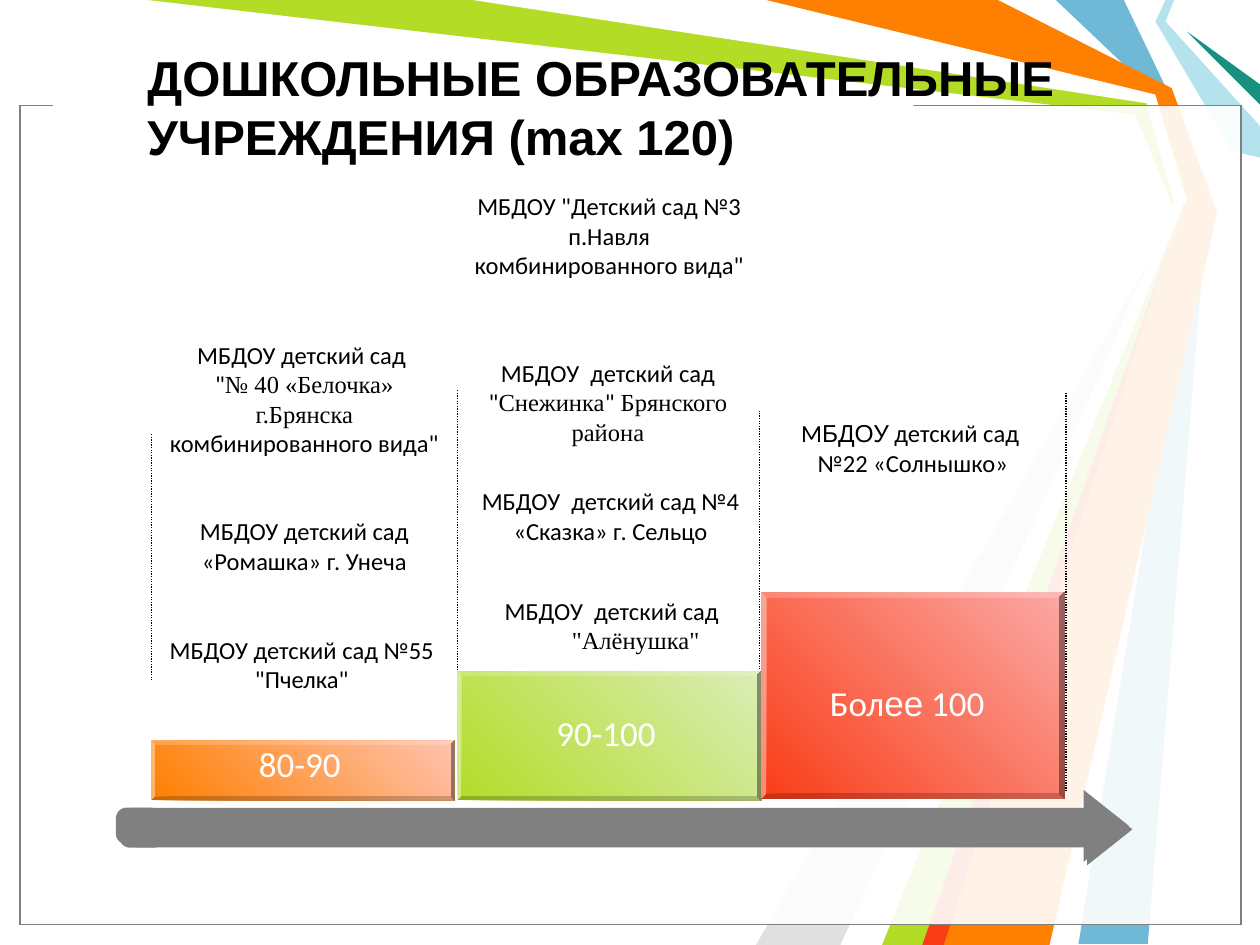
from lxml import etree
from pptx import Presentation
from pptx.dml.color import RGBColor
from pptx.enum.dml import MSO_LINE
from pptx.enum.shapes import MSO_CONNECTOR, MSO_SHAPE
from pptx.enum.text import MSO_ANCHOR, PP_ALIGN
from pptx.oxml import parse_xml
from pptx.oxml.ns import nsdecls, qn
from pptx.util import Inches, Pt

RECT, ROUNDED = MSO_SHAPE.RECTANGLE, MSO_SHAPE.ROUNDED_RECTANGLE
ARROW, BEVEL = MSO_SHAPE.RIGHT_ARROW, MSO_SHAPE.BEVEL
STRAIGHT, DOTTED = MSO_CONNECTOR.STRAIGHT, MSO_LINE.ROUND_DOT
LEFT, CENTER, MIDDLE = PP_ALIGN.LEFT, PP_ALIGN.CENTER, MSO_ANCHOR.MIDDLE

BLACK = RGBColor(0x00, 0x00, 0x00)
WHITE = RGBColor(0xFF, 0xFF, 0xFF)
GRAY = RGBColor(0x80, 0x80, 0x80)
SILVER = RGBColor(0xE0, 0xE0, 0xE0)
BLUE = RGBColor(0x6F, 0xB9, 0xD7)
PALE_BLUE = RGBColor(0xB4, 0xE3, 0xEE)
TEAL = RGBColor(0x18, 0x91, 0x80)
GREEN = RGBColor(0xB3, 0xDC, 0x27)
PALE_GREEN = RGBColor(0xDA, 0xED, 0xB7)
ORANGE = RGBColor(0xFF, 0x7F, 0x00)
PEACH = RGBColor(0xFF, 0xC3, 0xB0)
RED = RGBColor(0xF9, 0x3D, 0x17)
PINK = RGBColor(0xFB, 0xA9, 0xA5)

CALIBRI, ARIAL, TIMES = "Calibri", "Arial", "Times New Roman"

RIBBONS = [
    (BLUE, [(8.92, 0), (9.29, 0.77), (9.58, 1.67), (9.11, 7.49), (8.56, 7.49),
            (9.5, 1.67), (9.17, 0.75), (8.38, 0)]),
    (GREEN, [(1.17, 0), (3.83, 0), (9.14, 0.78), (9.42, 1.69), (7.42, 7.5),
             (6.92, 7.5), (9.35, 1.73), (9.01, 0.91)]),
    (SILVER, [(6.67, 7.5), (9.27, 1.81), (6, 7.5)]),
    (WHITE, [(3.75, 0), (9.1, 0.82), (9.32, 1.62), (6.75, 7.5), (7, 7.5),
             (9.41, 1.58), (9.17, 0.75), (6, 0)]),
    (PALE_BLUE, [(9.25, 0), (9.17, 0.17), (9.78, 1.2), (10, 1.25), (10, 1),
                 (9.25, 0.17), (9.32, 0)]),
    (TEAL, [(10, 0.83), (9.42, 0.25), (10, 0.67)]),
    (ORANGE, [(6.08, 0), (7.92, 0), (9.3, 0.7), (9.66, 1.69), (8.33, 7.5),
              (7.33, 7.5), (9.42, 1.58), (9.17, 0.75)]),
    (RED, [(7.32, 7.5), (9.32, 1.83), (7.49, 7.5)]),
]

# x, bottom, top
DIVIDERS = [(1.2, 5.4, 3.44), (3.63, 5.4, 3.09), (6.03, 6.03, 3.26), (8.46, 6.28, 3.12)]

# left, top, height, bevel depth, gradient colours
STEPS = [
    (1.2, 5.88, 0.47, 0.059, ORANGE, PEACH),
    (3.63, 5.33, 1.02, 0.03, GREEN, PALE_GREEN),
    (6.04, 4.7, 1.64, 0.025, RED, PINK),
]

# left, top, runs
STEP_LABELS = [
    (1.44, 5.84, [("80-90", CALIBRI)]),
    (3.87, 5.6, [("90-100", CALIBRI)]),
    (6.26, 5.36, [("Бол", CALIBRI), ("ее", ARIAL), (" 100", CALIBRI)]),
]

# left, top, height, paragraphs of runs
KINDERGARTENS = [
    (3.66, 1.47, 0.81, [[("МБДОУ \"Детский сад №3 п.Навля комбинированного вида\"", CALIBRI)]]),
    (6.07, 3.27, 0.57, [[("М", CALIBRI), ("БДОУ", ARIAL),
                         (" детский сад  №22 «Солнышко»", CALIBRI)]]),
    (3.65, 2.79, 0.8, [[("МБДОУ  детский сад \"", CALIBRI), ("Снежинка", TIMES),
                        ("\"", CALIBRI), (" Брянского района", TIMES)]]),
    (3.67, 3.81, 0.57, [[("МБДОУ  детский сад №4 «Сказка» г. Сельцо", CALIBRI)]]),
    (1.24, 2.65, 1.26, [[("МБДОУ детский сад ", CALIBRI)],
                        [("\"", CALIBRI), ("№ 40 «Белочка» г.Брянска ", TIMES),
                         ("комбинированного вида\"", CALIBRI)]]),
    (1.24, 4.05, 0.57, [[("МБДОУ детский сад «Ромашка» г. Унеча", CALIBRI)]]),
    (1.22, 4.99, 0.57, [[("МБДОУ детский сад №55 \"Пчелка\"", CALIBRI)]]),
]
ALYONUSHKA = [[("МБДОУ  детский сад ", CALIBRI), ("\"Алёнушка\"", TIMES)]]


def shadow_effect(color, distance, alpha=100):
    return parse_xml(
        f'<a:effectLst {nsdecls("a")}><a:outerShdw dist="{Pt(distance)}" dir="2700000">'
        f'<a:srgbClr val="{color}"><a:alpha val="{alpha * 1000}"/></a:srgbClr>'
        '</a:outerShdw></a:effectLst>')


def add_ribbon(slide, color, points):
    corners = [(Inches(x), Inches(y)) for x, y in points]
    builder = slide.shapes.build_freeform(*corners[0])
    builder.add_line_segments(corners[1:], close=True)
    ribbon = builder.convert_to_shape()
    ribbon.shadow.inherit = False
    ribbon.fill.solid()
    ribbon.fill.fore_color.rgb = color
    ribbon.line.fill.background()


def add_block(slide, preset, left, top, width, height, color, adjustments=()):
    block = slide.shapes.add_shape(
        preset, Inches(left), Inches(top), Inches(width), Inches(height))
    for index, value in enumerate(adjustments):
        block.adjustments[index] = value
    block.shadow.inherit = False
    block.fill.solid()
    block.fill.fore_color.rgb = color
    block.line.fill.background()
    return block


def add_frame(slide, line_color):
    """Add the translucent panel that fades the ribbons behind the content."""
    frame = add_block(slide, RECT, 0.16, 0.84, 9.69, 6.5, WHITE)
    fill_color = frame.fill._xPr.find(qn("a:solidFill"))[0]
    etree.SubElement(fill_color, qn("a:alpha")).set("val", "69000")
    frame.line.color.rgb = line_color
    frame.line.width = Pt(0.75)


def add_axis_part(slide, preset, left, top, width, height, adjustments):
    part = add_block(slide, preset, left, top, width, height, GRAY, adjustments)
    properties = part._element.spPr
    properties.replace(properties.find(qn("a:effectLst")), shadow_effect(GRAY, 2.8))


def add_divider(slide, x, bottom, top):
    divider = slide.shapes.add_connector(
        STRAIGHT, Inches(x), Inches(bottom), Inches(x), Inches(top))
    divider.line.color.rgb = BLACK
    divider.line.width = Pt(0.75)
    divider.line.dash_style = DOTTED
    etree.SubElement(divider._element.spPr, qn("a:effectLst"))


def add_step(slide, left, top, height, depth, start_color, end_color):
    step = add_block(slide, BEVEL, left, top, 2.41, height, start_color, [depth])
    step.fill.gradient()
    step.fill.gradient_angle = 45
    for stop, position, color in zip(step.fill.gradient_stops, (0, 1), (start_color, end_color)):
        stop.position = position
        stop.color.rgb = color


def add_text(slide, left, top, width, height, paragraphs, size, color):
    box = slide.shapes.add_textbox(Inches(left), Inches(top), Inches(width), Inches(height))
    frame = box.text_frame
    frame.word_wrap = True
    for index, runs in enumerate(paragraphs):
        paragraph = frame.add_paragraph() if index else frame.paragraphs[0]
        paragraph.alignment = CENTER
        for text, font_name in runs:
            run = paragraph.add_run()
            run.text = text
            run.font.name = font_name
            run.font.size = Pt(size)
            run.font.color.rgb = color
    return box


def add_step_label(slide, left, top, runs):
    label = add_text(slide, left, top, 1.88, 0.43, [runs], 20, WHITE)
    for run in label.text_frame.paragraphs[0].runs:
        fill = run.font._element.find(qn("a:solidFill"))
        fill.addnext(shadow_effect(BLACK, 2, 40))


def format_title(slide):
    title = slide.shapes.title
    slide.shapes._spTree.append(title._element)  # bring in front of the ribbons
    title.left, title.top = Inches(1.07), Inches(0.22)
    title.width, title.height = Inches(7.79), Inches(1.25)
    title.text_frame.text = "ДОШКОЛЬНЫЕ ОБРАЗОВАТЕЛЬНЫЕ УЧРЕЖДЕНИЯ (max 120)"
    title.text_frame.vertical_anchor = MIDDLE
    paragraph = title.text_frame.paragraphs[0]
    paragraph.alignment = LEFT
    font = paragraph.runs[0].font
    font.name, font.size, font.bold = ARIAL, Pt(28), True
    font.color.rgb = BLACK


def main():
    presentation = Presentation()
    presentation.slide_width, presentation.slide_height = Inches(10), Inches(7.5)
    slide = presentation.slides.add_slide(presentation.slide_layouts[5])
    for color, points in RIBBONS:
        add_ribbon(slide, color, points)
    for line_color in (BLACK, GRAY):
        add_frame(slide, line_color)
    add_block(slide, RECT, 0.42, 0.74, 6.83, 0.17, WHITE)
    format_title(slide)
    add_axis_part(slide, ROUNDED, 0.92, 6.41, 0.36, 0.29, [0.29])
    add_axis_part(slide, ARROW, 1.05, 6.27, 7.91, 0.57, [0.5, 0.63])
    for divider in DIVIDERS:
        add_divider(slide, *divider)
    for step in STEPS:
        add_step(slide, *step)
    for label in STEP_LABELS:
        add_step_label(slide, *label)
    for left, top, height, paragraphs in KINDERGARTENS:
        add_text(slide, left, top, 2.35, height, paragraphs, 14, BLACK)
    hanging = add_text(slide, 3.68, 4.68, 2.35, 0.57, ALYONUSHKA, 14, BLACK)
    indents = hanging.text_frame.paragraphs[0]._p.get_or_add_pPr()
    indents.set("marL", str(Inches(0.38)))
    indents.set("indent", str(Inches(-0.38)))
    presentation.save("out.pptx")


if __name__ == "__main__":
    main()
